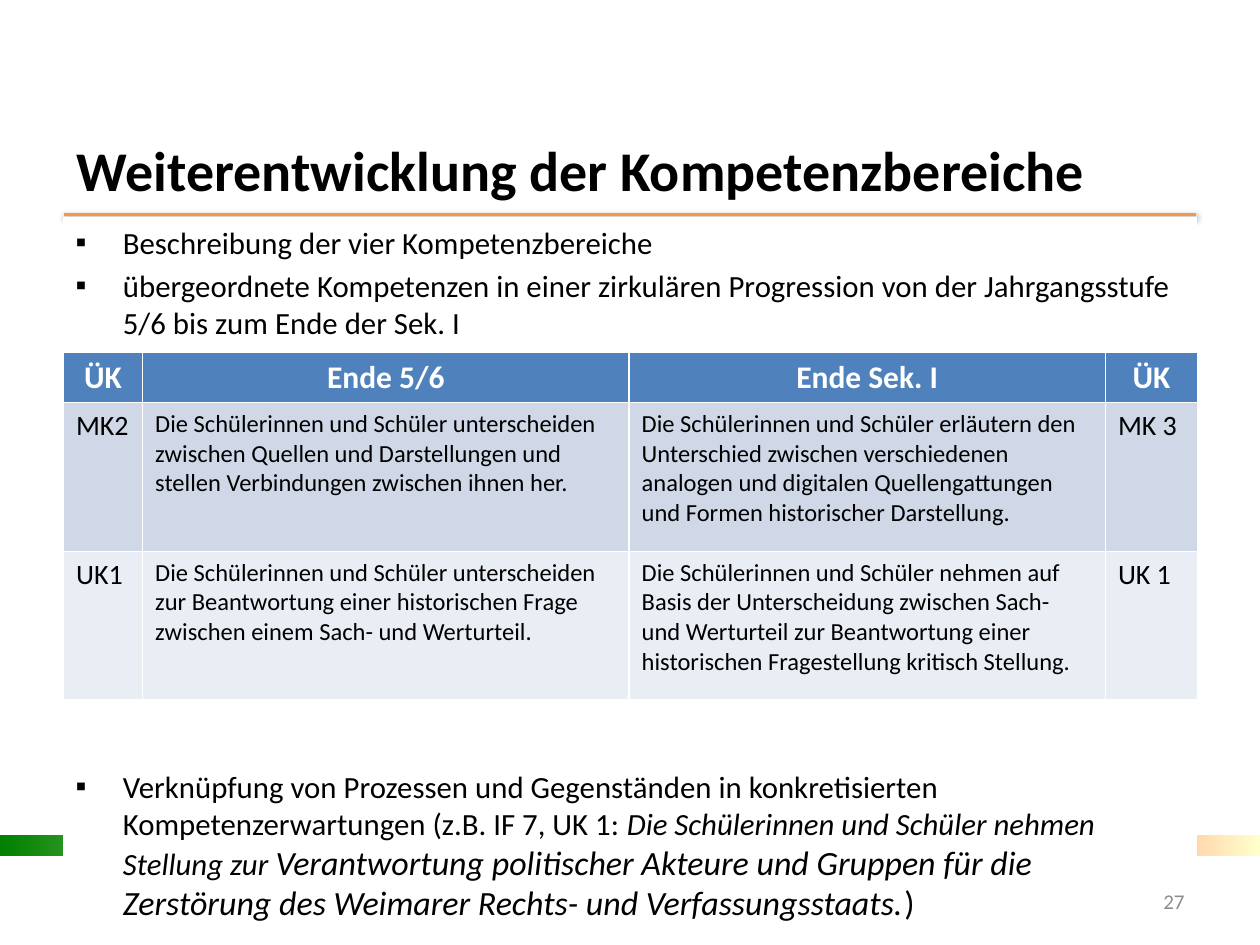
from lxml import etree
from pptx import Presentation
from pptx.dml.color import RGBColor
from pptx.enum.shapes import MSO_CONNECTOR, MSO_SHAPE
from pptx.enum.text import MSO_ANCHOR, MSO_AUTO_SIZE, PP_ALIGN
from pptx.oxml import parse_xml
from pptx.oxml.ns import nsdecls, qn
from pptx.util import Pt

FONT = "Calibri"
BLACK = RGBColor(0x00, 0x00, 0x00)
WHITE = RGBColor(0xFF, 0xFF, 0xFF)
GRAY = RGBColor(0x8C, 0x8C, 0x8C)
ORANGE = RGBColor(0xF7, 0x96, 0x46)
GREEN = RGBColor(0x00, 0x80, 0x00)
RED = RGBColor(0xFF, 0x00, 0x00)
CREAM = RGBColor(0xFF, 0xFF, 0xCC)
HEADER_BLUE = RGBColor(0x4F, 0x81, 0xBD)
BAND_FILLS = [RGBColor(0xD0, 0xD8, 0xE8), RGBColor(0xE9, 0xED, 0xF4)]

TITLE = "Weiterentwicklung der Kompetenzbereiche"
# Each bullet: space before, then runs of (text, size, italic)
BULLETS = [
    (0, [("Beschreibung der vier Kompetenzbereiche", 17.6, False)]),
    (3.5, [("übergeordnete Kompetenzen in einer zirkulären Progression von der "
            "Jahrgangsstufe 5/6 bis zum Ende der Sek. I", 17.6, False)]),
    (244, [("Verknüpfung von Prozessen und Gegenständen in konkretisierten "
            "Kompetenzerwartungen (z.B. IF 7, UK 1: ", 17.6, False),
           ("Die Schülerinnen und Schüler nehmen Stellung zur ", 17.6, True),
           ("Verantwortung politischer Akteure und Gruppen für die Zerstörung "
            "des Weimarer Rechts- und Verfassungsstaats.", 19.4, True),
           (")", 19.4, False)]),
]
COLUMN_WIDTHS = [45.2, 278, 272.2, 52.6]
ROW_HEIGHTS = [28.4, 85, 85]
TABLE_ROWS = [
    ["ÜK", "Ende 5/6", "Ende Sek. I", "ÜK"],
    ["MK2",
     "Die Schülerinnen und Schüler unterscheiden zwischen Quellen und "
     "Darstellungen und stellen Verbindungen zwischen ihnen her.",
     "Die Schülerinnen und Schüler erläutern den Unterschied zwischen "
     "verschiedenen analogen und digitalen Quellengattungen und Formen "
     "historischer Darstellung.",
     "MK 3"],
    ["UK1",
     "Die Schülerinnen und Schüler unterscheiden zur Beantwortung einer "
     "historischen Frage zwischen einem Sach- und Werturteil.",
     "Die Schülerinnen und Schüler nehmen auf Basis der Unterscheidung "
     "zwischen Sach- und Werturteil zur Beantwortung einer historischen "
     "Fragestellung kritisch Stellung.",
     "UK 1"],
]


def place(sp, left, top, width, height):
    sp.left, sp.top = Pt(left), Pt(top)
    sp.width, sp.height = Pt(width), Pt(height)


def add_run(p, text, size, color=BLACK, bold=False, italic=False):
    r = p.add_run()
    r.text = text
    r.font.name, r.font.size = FONT, Pt(size)
    r.font.bold, r.font.italic = bold, italic
    r.font.color.rgb = color


def set_bullet(p, char, indent):
    pPr = p._p.get_or_add_pPr()
    pPr.set("marL", str(Pt(indent)))
    pPr.set("indent", str(-Pt(indent)))
    etree.SubElement(pPr, qn("a:buFont")).set("typeface", "Arial")
    etree.SubElement(pPr, qn("a:buChar")).set("char", char)


def add_gradient_bar(slide, left, start, end, angle):
    sp = slide.shapes.add_shape(MSO_SHAPE.RECTANGLE, Pt(left), Pt(477.4),
                                Pt(235.4), Pt(11.5))
    sp.shadow.inherit = False
    sp.line.fill.background()
    sp.fill.gradient()
    sp.fill.gradient_angle = angle
    for stop, color in zip(sp.fill.gradient_stops, (start, end)):
        stop.color.rgb = color


def add_title_rule(slide):
    rule = slide.shapes.add_connector(MSO_CONNECTOR.STRAIGHT, Pt(36.6),
                                      Pt(122.5), Pt(683.4), Pt(122.5))
    rule.line.color.rgb = ORANGE
    rule.line.width = Pt(2)
    # Soft shadow below the rule
    rule._element.spPr.append(parse_xml(
        f'<a:effectLst {nsdecls("a")}>'
        f'<a:outerShdw blurRad="{Pt(3.1)}" dist="{Pt(1.6)}" dir="5400000">'
        '<a:srgbClr val="000000"><a:alpha val="38000"/></a:srgbClr>'
        '</a:outerShdw></a:effectLst>'))


def fill_title(slide):
    sp = slide.shapes.title
    place(sp, 36.6, 71.3, 648, 51.2)
    tf = sp.text_frame
    tf.auto_size = MSO_AUTO_SIZE.NONE
    tf.vertical_anchor = MSO_ANCHOR.MIDDLE
    p = tf.paragraphs[0]
    p.alignment = PP_ALIGN.LEFT
    add_run(p, TITLE, 32, bold=True)


def fill_body(slide):
    sp = slide.placeholders[1]
    place(sp, 36, 124, 648, 405.2)
    sp.fill.solid()
    sp.fill.fore_color.rgb = WHITE
    tf = sp.text_frame
    tf.auto_size = MSO_AUTO_SIZE.NONE
    for i, (space, runs) in enumerate(BULLETS):
        p = tf.add_paragraph() if i else tf.paragraphs[0]
        set_bullet(p, "▪", 27)
        p.space_before = Pt(space)
        for text, size, italic in runs:
            add_run(p, text, size, italic=italic)


def add_page_number(slide, number):
    sp = slide.shapes.add_textbox(Pt(638), Pt(500.4), Pt(46), Pt(28.8))
    tf = sp.text_frame
    tf.word_wrap = True
    tf.vertical_anchor = MSO_ANCHOR.MIDDLE
    p = tf.paragraphs[0]
    p.alignment = PP_ALIGN.RIGHT
    add_run(p, number, 12, GRAY)


def add_competence_table(slide):
    # The default table style supplies the white cell borders
    table = slide.shapes.add_table(
        len(ROW_HEIGHTS), len(COLUMN_WIDTHS), Pt(36.3), Pt(201.3),
        Pt(sum(COLUMN_WIDTHS)), Pt(sum(ROW_HEIGHTS))).table
    for column, width in zip(table.columns, COLUMN_WIDTHS):
        column.width = Pt(width)
    for i, texts in enumerate(TABLE_ROWS):
        table.rows[i].height = Pt(ROW_HEIGHTS[i])
        for j, text in enumerate(texts):
            cell = table.cell(i, j)
            cell.fill.solid()
            p = cell.text_frame.paragraphs[0]
            if i == 0:
                cell.fill.fore_color.rgb = HEADER_BLUE
                p.alignment = PP_ALIGN.CENTER
                add_run(p, text, 18, WHITE, bold=True)
            else:
                cell.fill.fore_color.rgb = BAND_FILLS[i - 1]
                add_run(p, text, 14 if j in (1, 2) else 16)


def main():
    prs = Presentation()
    prs.slide_width, prs.slide_height = Pt(720), Pt(540)
    slide = prs.slides.add_slide(prs.slide_layouts[1])

    # Decoration behind the text
    add_title_rule(slide)
    add_gradient_bar(slide, 0, GREEN, CREAM, 0)
    add_gradient_bar(slide, 484.6, CREAM, RED, 180)
    # Bring the placeholders in front of the bars
    for sp in (slide.shapes.title, slide.placeholders[1]):
        slide.shapes._spTree.append(sp._element)

    # Content
    fill_title(slide)
    fill_body(slide)
    add_page_number(slide, "27")
    add_competence_table(slide)

    prs.save("out.pptx")


if __name__ == "__main__":
    main()
